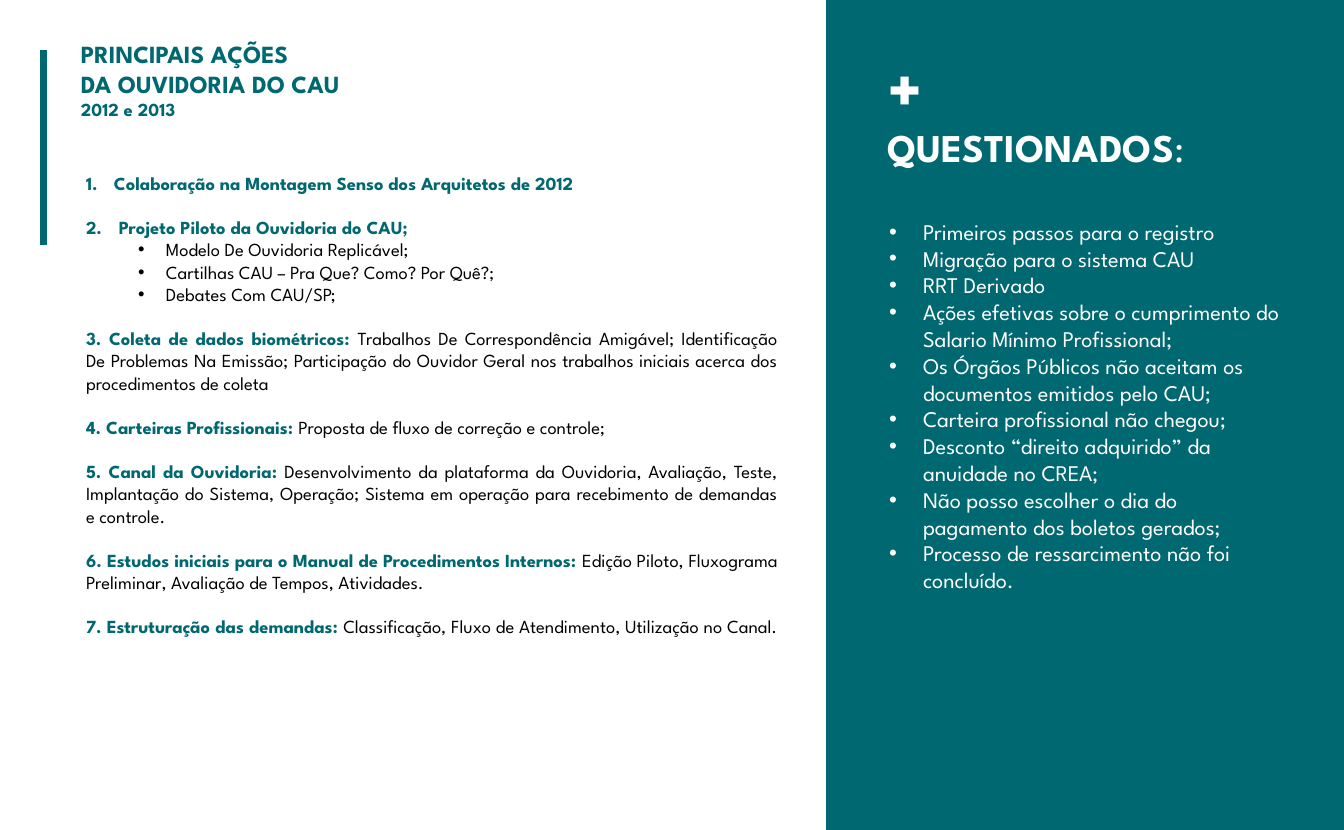
from dataclasses import dataclass

from lxml import etree
from pptx import Presentation
from pptx.dml.color import RGBColor
from pptx.enum.shapes import MSO_CONNECTOR, MSO_SHAPE
from pptx.enum.text import MSO_AUTO_SIZE, PP_ALIGN
from pptx.oxml.ns import qn
from pptx.util import Emu, Pt

TEAL = RGBColor(0x00, 0x68, 0x71)
WHITE = RGBColor(0xFF, 0xFF, 0xFF)
BLACK = RGBColor(0x00, 0x00, 0x00)
FONT = "League Spartan"
GROW = MSO_AUTO_SIZE.SHAPE_TO_FIT_TEXT
FIXED = MSO_AUTO_SIZE.NONE
LEFT = PP_ALIGN.LEFT
JUSTIFY = PP_ALIGN.JUSTIFY
RECT = MSO_SHAPE.RECTANGLE
STRAIGHT = MSO_CONNECTOR.STRAIGHT
SCALE = 8246
DOT = "•"
NUMBER = "number"


@dataclass
class Box:
    left: int
    top: int
    width: int
    height: int


@dataclass
class Run:
    text: str
    size: float
    color: RGBColor
    bold: bool = False


@dataclass
class Para:
    runs: list[Run]
    mark: str = ""
    indent: int = 0
    hang: int = 0
    level: int = 0
    gap: float = 0


QUESTIONS = [
    "Primeiros passos para o registro",
    "Migração para o sistema CAU",
    "RRT Derivado",
    "Ações efetivas sobre o cumprimento do Salario Mínimo Profissional;",
    "Os Órgãos Públicos não aceitam os documentos emitidos pelo CAU;",
    "Carteira profissional não chegou;",
    "Desconto “direito adquirido” da anuidade no CREA;",
    "Não posso escolher o dia do pagamento dos boletos gerados;",
    "Processo de ressarcimento não foi concluído.",
]
HEADS = [
    "Colaboração na Montagem Senso dos Arquitetos de 2012",
    " Projeto Piloto da Ouvidoria do CAU; ",
]
PILOT = [
    "Modelo De Ouvidoria Replicável;",
    "Cartilhas CAU – Pra Que? Como? Por Quê?;",
    "Debates Com CAU/SP;",
]
ACTIONS = [
    ("3. Coleta de dados biométricos: ",
     "Trabalhos De Correspondência Amigável; Identificação De Problemas Na Emissão; "
     "Participação do Ouvidor Geral nos trabalhos iniciais acerca dos procedimentos de coleta"),
    ("4. Carteiras Profissionais: ", "Proposta de fluxo de correção e controle;"),
    ("5. Canal da Ouvidoria: ",
     "Desenvolvimento da plataforma da Ouvidoria, Avaliação, Teste, Implantação do Sistema, "
     "Operação; Sistema em operação para recebimento de demandas e controle."),
    ("6. Estudos iniciais para o Manual de Procedimentos Internos: ",
     "Edição Piloto, Fluxograma Preliminar, Avaliação de Tempos, Atividades."),
    ("7. Estruturação das demandas:",
     " Classificação, Fluxo de Atendimento, Utilização no Canal. "),
]
BODY = 12
GAP = 14.4


def px(length: int) -> Emu:
    return Emu(length * SCALE)


def set_mark(props, para: Para) -> None:
    props.set("marL", str(px(para.indent)))
    props.set("indent", str(px(-para.hang)))
    if para.mark == NUMBER:
        etree.SubElement(props, qn("a:buFont"), typeface="+mj-lt")
        etree.SubElement(props, qn("a:buAutoNum"), type="arabicPeriod")
    else:
        etree.SubElement(props, qn("a:buFont"), typeface="Arial")
        etree.SubElement(props, qn("a:buChar"), char=para.mark)


def add_text(slide, box: Box, paras: list[Para], *, align=LEFT, fit=GROW,
             spacing: float = 1.0, side: int = 11, inset: int = 6) -> None:
    frame = slide.shapes.add_textbox(
        px(box.left), px(box.top), px(box.width), px(box.height)).text_frame
    frame.word_wrap = True
    frame.auto_size = fit
    frame.margin_left = frame.margin_right = px(side)
    frame.margin_top = px(inset)
    frame.margin_bottom = px(5)
    for index, para in enumerate(paras):
        line = frame.add_paragraph() if index else frame.paragraphs[0]
        line.alignment = align
        line.level = para.level
        line.line_spacing = spacing
        line.space_before = Pt(para.gap)
        if para.mark:
            set_mark(line._p.get_or_add_pPr(), para)
        for part in para.runs:
            run = line.add_run()
            run.text = part.text
            run.font.name = FONT
            run.font.size = Pt(part.size)
            run.font.bold = part.bold
            run.font.color.rgb = part.color


def add_panel(slide, box: Box) -> None:
    panel = slide.shapes.add_shape(
        RECT, px(box.left), px(box.top), px(box.width), px(box.height))
    panel.shadow.inherit = False
    panel.fill.solid()
    panel.fill.fore_color.rgb = TEAL
    panel.line.color.rgb = TEAL
    panel.line.width = Pt(1)


def add_rule(slide, left: int, top: int, end: int) -> None:
    rule = slide.shapes.add_connector(STRAIGHT, px(left), px(top), px(left), px(end))
    rule.line.color.rgb = TEAL
    rule.line.width = Pt(4.5)
    etree.SubElement(rule._element.spPr, qn("a:effectLst"))


def list_actions() -> list[Para]:
    heads = [Para([Run(text, BODY, TEAL, True)], NUMBER, 28, 28, gap=GAP if index else 0)
             for index, text in enumerate(HEADS)]
    pilot = [Para([Run(text, BODY, BLACK)], DOT, 80, 28, level=1) for text in PILOT]
    rest = [Para([Run(head, BODY, TEAL, True), Run(text, BODY, BLACK)], gap=GAP)
            for head, text in ACTIONS]
    return heads + pilot + rest


def main() -> None:
    deck = Presentation()
    deck.slide_width, deck.slide_height = px(1344), px(830)
    slide = deck.slides.add_slide(deck.slide_layouts[6])

    add_panel(slide, Box(827, 0, 517, 831))
    add_text(slide, Box(878, 50, 414, 136), [
        Para([Run("+", 44, WHITE, True)]),
        Para([Run("QUESTIONADOS", 25.5, WHITE, True), Run(":", 25.5, WHITE)]),
    ], fit=FIXED, spacing=0.9, side=10, inset=5)
    add_text(slide, Box(878, 212, 414, 498),
             [Para([Run(text, 14.5, WHITE)], DOT, 34, 34) for text in QUESTIONS])
    add_text(slide, Box(75, 166, 714, 503), list_actions(), align=JUSTIFY)
    add_text(slide, Box(70, 0, 517, 128), [
        Para([Run("PRINCIPAIS AÇÕES", 16, TEAL, True)]),
        Para([Run("DA OUVIDORIA DO CAU", 16, TEAL, True)]),
        Para([Run("2012 e 2013", BODY, TEAL, True)]),
    ], inset=39)
    add_rule(slide, 44, 50, 245)
    deck.save("out.pptx")


if __name__ == "__main__":
    main()
